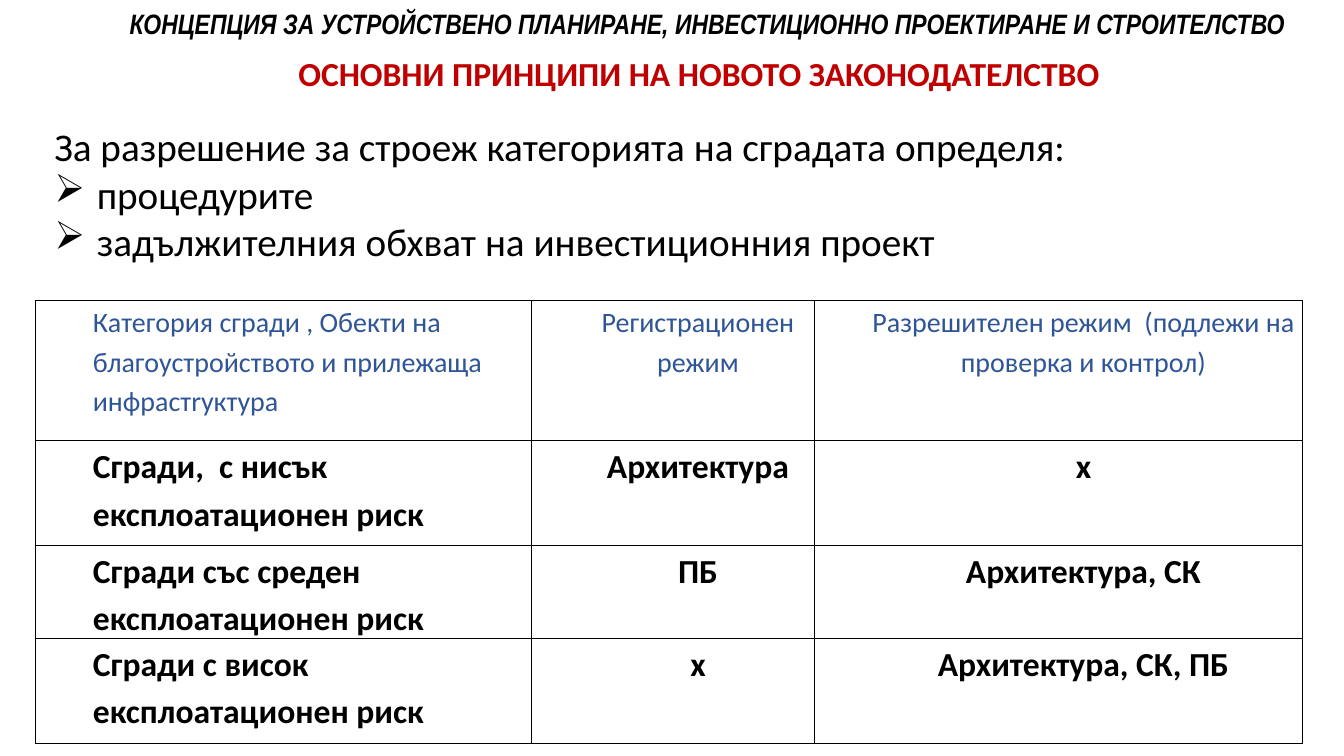
from lxml.etree import SubElement
from pptx import Presentation
from pptx.dml.color import RGBColor
from pptx.enum.text import MSO_AUTO_SIZE as AutoSize, PP_ALIGN as Align
from pptx.oxml.ns import qn
from pptx.util import Cm, Pt


def style(paragraph, size, color, bold=False, name="Calibri"):
    font = paragraph.font
    font.name, font.size, font.bold = name, Pt(size), bold
    font.color.rgb = RGBColor.from_string(color)


def add_text(left, top, width, height, lines):
    """Add a wrapping text box and return its paragraphs, one per line."""
    box = slide.shapes.add_textbox(Cm(left), Cm(top), Cm(width), Cm(height))
    frame = box.text_frame
    frame.word_wrap = True
    frame.auto_size = AutoSize.SHAPE_TO_FIT_TEXT
    frame.text = "\n".join(lines)
    return frame.paragraphs


presentation = Presentation()
presentation.slide_width, presentation.slide_height = Cm(33.87), Cm(19.05)
slide = presentation.slides.add_slide(presentation.slide_layouts[6])

# Running header
header, = add_text(3.02, 0.03, 30.68, 1.12, [
    "КОНЦЕПЦИЯ ЗА УСТРОЙСТВЕНО ПЛАНИРАНЕ, ИНВЕСТИЦИОННО ПРОЕКТИРАНЕ И СТРОИТЕЛСТВО"])
style(header, 20, "000000", bold=True, name="Arial Narrow")
header.font.italic = True

# Introduction with bullets
intro = add_text(1.12, 2.97, 32.03, 4.62, [
    "За разрешение за строеж категорията на сградата определя:",
    "процедурите",
    "задължителния обхват на инвестиционния проект"])
for paragraph in intro[1:]:
    properties = paragraph._p.get_or_add_pPr()
    properties.set("marL", str(Cm(1.07)))
    properties.set("indent", str(-Cm(1.07)))
    SubElement(properties, qn("a:buChar"), char="➢")
for paragraph in intro:
    style(paragraph, 28, "000000")

# Table of building categories
rows = [
    ("Категория сгради , Обекти на благоустройството и прилежаща инфрастrуктура",
     "Регистрационен режим",
     "Разрешителен режим  (подлежи на проверка и контрол)"),
    ("Сгради,  с нисък експлоатационен риск", "Архитектура", "х"),
    ("Сгради със среден експлоатационен риск", "ПБ", "Архитектура, СК"),
    ("Сгради с висок експлоатационен риск", "х", "Архитектура, СК, ПБ"),
]
column_widths = [12.5, 7.13, 12.3]
row_heights = [3.53, 2.64, 1.75, 2.64]
table = slide.shapes.add_table(
    len(rows), len(column_widths), Cm(0.89), Cm(7.58),
    Cm(sum(column_widths)), Cm(sum(row_heights))).table
table.first_row = table.horz_banding = False
for column, width in zip(table.columns, column_widths):
    column.width = Cm(width)
for row, height in zip(table.rows, row_heights):
    row.height = Cm(height)

for row_index, texts in enumerate(rows):
    for column_index, text in enumerate(texts):
        cell = table.cell(row_index, column_index)
        cell.margin_left = cell.margin_right = Cm(0.18)
        cell.margin_top = cell.margin_bottom = 0
        cell.text = text
        paragraph = cell.text_frame.paragraphs[0]
        paragraph.line_spacing = 1.15
        paragraph.alignment = Align.CENTER if column_index else Align.LEFT
        paragraph._p.get_or_add_pPr().set("marL", str(Cm(1.27)))
        if row_index == 0:
            style(paragraph, 20, "2F5597")
        else:
            style(paragraph, 24, "000000", bold=True)
        cell_properties = cell._tc.get_or_add_tcPr()
        for side in ("lnL", "lnR", "lnT", "lnB"):
            border = SubElement(cell_properties, qn(f"a:{side}"), w=str(Pt(1)))
            fill = SubElement(border, qn("a:solidFill"))
            SubElement(fill, qn("a:srgbClr"), val="000000")
        cell.fill.background()

# Slide title
title, = add_text(3.15, 1.22, 28.93, 1.27, ["ОСНОВНИ ПРИНЦИПИ НА НОВОТО ЗАКОНОДАТЕЛСТВО"])
title.alignment = Align.CENTER
style(title, 24, "C00000", bold=True)

presentation.save("out.pptx")
